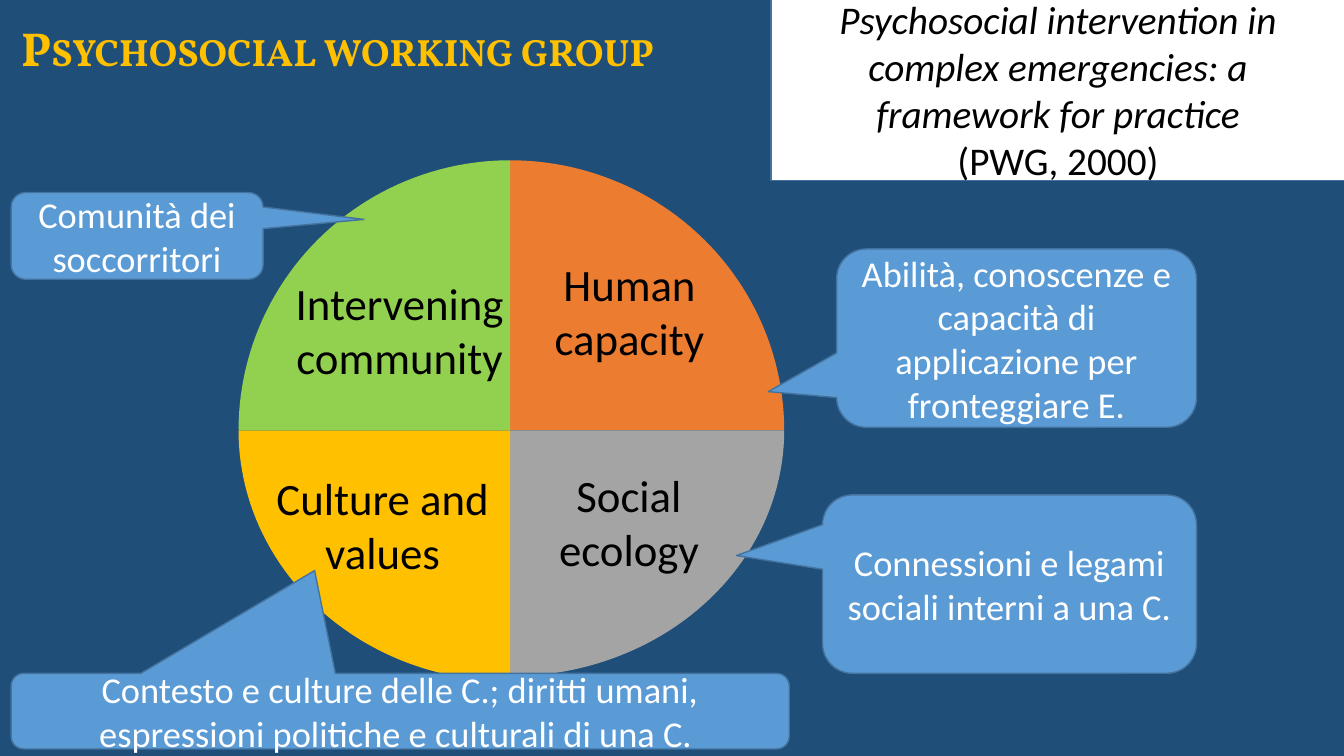
from dataclasses import dataclass
from math import cos, pi, sin

from pptx import Presentation
from pptx.dml.color import RGBColor
from pptx.enum.shapes import MSO_SHAPE
from pptx.enum.text import MSO_ANCHOR, PP_ALIGN
from pptx.util import Emu, Inches, Pt

SLIDE_WIDTH = Inches(13.333)
SLIDE_HEIGHT = Inches(7.5)

NAVY = RGBColor(0x1F, 0x4E, 0x79)
GOLD = RGBColor(0xFF, 0xC0, 0x00)
ORANGE = RGBColor(0xEC, 0x7C, 0x30)
GRAY = RGBColor(0xA4, 0xA4, 0xA4)
GREEN = RGBColor(0x92, 0xD0, 0x50)
BLUE = RGBColor(0x5B, 0x9B, 0xD5)
OUTLINE = RGBColor(0x43, 0x73, 0x9E)
WHITE = RGBColor(0xFF, 0xFF, 0xFF)
BLACK = RGBColor(0x00, 0x00, 0x00)

ARC_STEPS = 48


@dataclass(frozen=True)
class Area:
    """A box in percent of the slide's width and height."""
    left: float
    top: float
    width: float
    height: float

    def box(self) -> tuple[Emu, Emu, Emu, Emu]:
        return across(self.left), down(self.top), across(self.width), down(self.height)


@dataclass(frozen=True)
class Quarter:
    """A quarter ellipse; signed radii point right and down."""
    radius_x: float
    radius_y: float
    color: RGBColor


@dataclass(frozen=True)
class Label:
    text: str
    area: Area


@dataclass(frozen=True)
class Callout:
    text: str
    area: Area
    tip_x: float
    tip_y: float


TITLE = Label("Psychosocial working group", Area(0.83, 1.87, 59.55, 8.93))
CITATION_AREA = Area(57.38, -0.13, 42.68, 24)
CENTER_X, CENTER_Y = 37.95, 56.93

QUARTERS = [
    Quarter(20.4, -35.73, ORANGE),
    Quarter(20.4, 32.53, GRAY),
    Quarter(-20.2, 33.2, GOLD),
    Quarter(-20.2, -35.73, GREEN),
]
LABELS = [
    Label("Human capacity", Area(36.3, 33.33, 21.08, 16)),
    Label("Social ecology", Area(38.63, 61.2, 16.35, 16)),
    Label("Culture and values", Area(17.93, 61.6, 21.08, 16)),
    Label("Intervening community", Area(19.2, 35.87, 21.08, 16)),
]
CALLOUTS = [
    Callout("Abilità, conoscenze e capacità di applicazione per fronteggiare E.",
            Area(62.25, 32.93, 26.78, 23.6), -0.69, 0.3),
    Callout("Connessioni e legami sociali interni a una C.",
            Area(61.2, 65.47, 27.83, 23.6), -0.73, -0.16),
    Callout("Contesto e culture delle C.; diritti umani, espressioni politiche e culturali di una C. ",
            Area(0.83, 89.07, 57.9, 10), -0.11, -1.86),
    Callout("Comunità dei soccorritori", Area(0.83, 25.47, 18.75, 11.47), 0.9, -0.19),
]


def across(percent: float) -> Emu:
    return Emu(round(SLIDE_WIDTH * percent / 100))


def down(percent: float) -> Emu:
    return Emu(round(SLIDE_HEIGHT * percent / 100))


def style(paragraph, size: float, color: RGBColor, name: str = "Calibri") -> None:
    paragraph.font.size = Pt(size)
    paragraph.font.name = name
    paragraph.font.color.rgb = color


def add_text(slide, label: Label):
    """Add a wrapping text box and return its paragraph."""
    frame = slide.shapes.add_textbox(*label.area.box()).text_frame
    frame.word_wrap = True
    paragraph = frame.paragraphs[0]
    paragraph.text = label.text
    return paragraph


def add_title(slide) -> None:
    paragraph = add_text(slide, TITLE)
    style(paragraph, 34, GOLD, "Vollkorn")
    paragraph.font.bold = True
    paragraph.runs[0].font._element.set("cap", "small")


def add_label(slide, label: Label) -> None:
    paragraph = add_text(slide, label)
    paragraph.alignment = PP_ALIGN.CENTER
    paragraph.space_before = Pt(30)
    style(paragraph, 32, BLACK)


def add_quarter(slide, quarter: Quarter) -> None:
    angles = [step * pi / 2 / ARC_STEPS for step in range(ARC_STEPS + 1)]
    arc = [(across(CENTER_X + quarter.radius_x * sin(angle)),
            down(CENTER_Y + quarter.radius_y * cos(angle))) for angle in angles]
    builder = slide.shapes.build_freeform(across(CENTER_X), down(CENTER_Y))
    builder.add_line_segments(arc, close=True)
    shape = builder.convert_to_shape()
    shape.shadow.inherit = False
    shape.fill.solid()
    shape.fill.fore_color.rgb = quarter.color
    shape.line.fill.background()


def add_panel(slide, kind: MSO_SHAPE, area: Area, color: RGBColor):
    """Add an outlined shape with vertically centred, wrapping text."""
    shape = slide.shapes.add_shape(kind, *area.box())
    shape.shadow.inherit = False
    shape.fill.solid()
    shape.fill.fore_color.rgb = color
    shape.line.color.rgb = OUTLINE
    shape.line.width = Pt(1)
    shape.text_frame.word_wrap = True
    shape.text_frame.vertical_anchor = MSO_ANCHOR.MIDDLE
    return shape


def add_callout(slide, callout: Callout) -> None:
    shape = add_panel(slide, MSO_SHAPE.ROUNDED_RECTANGULAR_CALLOUT, callout.area, BLUE)
    shape.adjustments[0] = callout.tip_x
    shape.adjustments[1] = callout.tip_y
    paragraph = shape.text_frame.paragraphs[0]
    paragraph.text = callout.text
    paragraph.alignment = PP_ALIGN.CENTER
    style(paragraph, 26, WHITE)


def add_citation(slide) -> None:
    frame = add_panel(slide, MSO_SHAPE.RECTANGLE, CITATION_AREA, WHITE).text_frame
    frame.text = ("Psychosocial intervention in complex emergencies: a framework for practice\n"
                  "(PWG, 2000)")
    for paragraph in frame.paragraphs:
        paragraph.alignment = PP_ALIGN.CENTER
        style(paragraph, 28, BLACK)
    frame.paragraphs[0].font.italic = True


def main() -> None:
    presentation = Presentation()
    presentation.slide_width = SLIDE_WIDTH
    presentation.slide_height = SLIDE_HEIGHT
    slide = presentation.slides.add_slide(presentation.slide_layouts[6])
    slide.background.fill.solid()
    slide.background.fill.fore_color.rgb = NAVY

    add_title(slide)
    for quarter in QUARTERS:
        add_quarter(slide, quarter)
    for label in LABELS:
        add_label(slide, label)
    for callout in CALLOUTS:
        add_callout(slide, callout)
    add_citation(slide)
    presentation.save("out.pptx")


if __name__ == "__main__":
    main()
